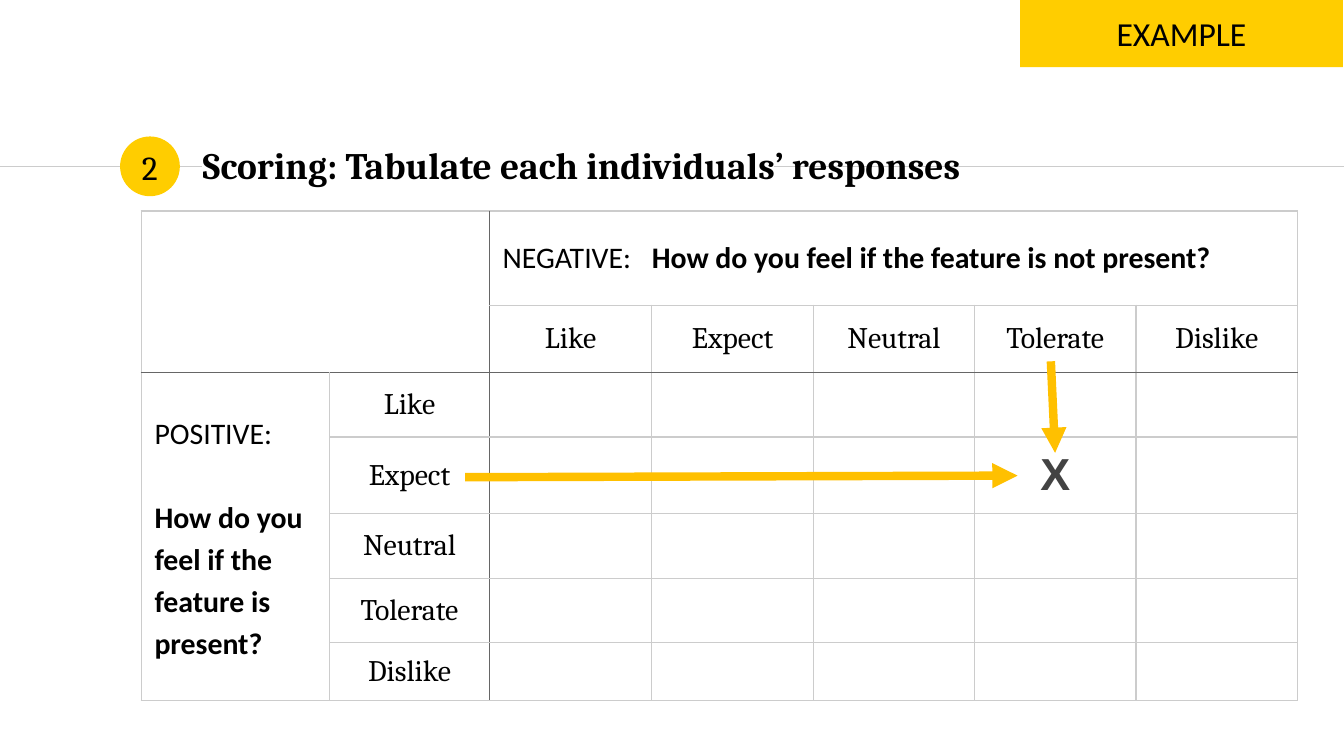
from lxml import etree
from pptx import Presentation
from pptx.dml.color import RGBColor
from pptx.enum import shapes, text
from pptx.oxml.ns import qn
from pptx.util import Cm, Pt

GOLD, AMBER = "FFCD00", "FFC000"
PALE, DARK, BLACK = "CCCCCC", "666666", "000000"
LEVELS = ["Like", "Expect", "Neutral", "Tolerate", "Dislike"]
WIDTHS = [3.56, 3.02, 3.07] + [3.05] * 4
HEIGHTS = [1.78, 1.27, 1.22, 1.45, 1.22, 1.22, 1.09]
CENTER = text.PP_ALIGN.CENTER


def tint(value):
    return RGBColor.from_string(value)


def style(run, size, face, color=BLACK, bold=False):
    font = run.font
    font.size, font.name, font.bold = Pt(size), face, bold
    font.color.rgb = tint(color)


def frame(box, words, size, face, align=CENTER, bold=False):
    """Put one middle-anchored line of text in a shape."""
    body = box.text_frame
    body.word_wrap = True
    body.auto_size = text.MSO_AUTO_SIZE.NONE
    body.vertical_anchor = text.MSO_ANCHOR.MIDDLE
    body.margin_left = body.margin_right = Cm(0.25)
    body.margin_top = body.margin_bottom = Cm(0.25)
    body.text = words
    para = body.paragraphs[0]
    para.alignment = align
    style(para.runs[0], size, face, bold=bold)


def block(slide, kind, x, y, w, h):
    shape = slide.shapes.add_shape(kind, Cm(x), Cm(y), Cm(w), Cm(h))
    shape.shadow.inherit = False
    shape.fill.solid()
    shape.fill.fore_color.rgb = tint(GOLD)
    shape.line.fill.background()
    return shape


def rule(slide, x1, y1, x2, y2, color, width, arrow=False):
    line = slide.shapes.add_connector(
        shapes.MSO_CONNECTOR.STRAIGHT, Cm(x1), Cm(y1), Cm(x2), Cm(y2))
    line.line.color.rgb = tint(color)
    line.line.width = Pt(width)
    if arrow:
        etree.SubElement(line.line._get_or_add_ln(), qn("a:tailEnd"), type="triangle")
    etree.SubElement(line.element.spPr, qn("a:effectLst"))


def edge(cell, side, color):
    props = cell._tc.get_or_add_tcPr()
    line = etree.SubElement(props, qn("a:ln" + side), w=str(Pt(0.75)))
    fill = etree.SubElement(line, qn("a:solidFill"))
    etree.SubElement(fill, qn("a:srgbClr"), val=color)


def dress(cell, row, col):
    """Set borders, darker around the headings, with margins and no fill."""
    last_row = row + cell.span_height - 1
    last_col = col + cell.span_width - 1
    marks = {"L": col == 2, "R": last_col == 1, "T": row == 2, "B": last_row == 1}
    for side, strong in marks.items():
        edge(cell, side, DARK if strong else PALE)
    cell.fill.background()
    cell.vertical_anchor = text.MSO_ANCHOR.MIDDLE
    cell.margin_left = cell.margin_right = Cm(0.25)
    cell.margin_top = cell.margin_bottom = Cm(0.18)


def label(cell, words, size=16, face="Cambria", color=BLACK, bold=False):
    cell.text = words
    para = cell.text_frame.paragraphs[0]
    para.alignment = CENTER
    style(para.runs[0], size, face, color, bold)


def ask_across(cell):
    para = cell.text_frame.paragraphs[0]
    lines = ["NEGATIVE:\t", "How do you feel if the feature is not present?"]
    for words, bold in zip(lines, (False, True)):
        run = para.add_run()
        run.text = words
        style(run, 16, "Calibri", bold=bold)
    tabs = etree.SubElement(para._p.get_or_add_pPr(), qn("a:tabLst"))
    etree.SubElement(tabs, qn("a:tab"), pos=str(Cm(2.82)), algn="l")


def ask_down(cell):
    cell.text = "POSITIVE:\nHow do you feel if the feature is present?"
    first, second = cell.text_frame.paragraphs
    for para in (first, second):
        para.line_spacing = 1.15
        style(para.runs[0], 16, "Calibri", bold=para is second)
    second.space_before = Pt(22.5)


def grid(slide):
    table = slide.shapes.add_table(
        len(HEIGHTS), len(WIDTHS), Cm(2.67), Cm(3.99),
        Cm(sum(WIDTHS)), Cm(sum(HEIGHTS))).table
    table.first_row = table.horz_banding = False
    for column, width in zip(table.columns, WIDTHS):
        column.width = Cm(width)
    for row, height in zip(table.rows, HEIGHTS):
        row.height = Cm(height)
    for start, end in [((0, 0), (1, 1)), ((0, 2), (0, 6)), ((2, 0), (6, 0))]:
        table.cell(*start).merge(table.cell(*end))
    for row in range(len(HEIGHTS)):
        for col in range(len(WIDTHS)):
            dress(table.cell(row, col), row, col)
            if row > 1 and col > 1:
                inner = table.cell(row, col)
                inner.margin_top = inner.margin_bottom = 0
    ask_across(table.cell(0, 2))
    ask_down(table.cell(2, 0))
    for step, level in enumerate(LEVELS, 2):
        label(table.cell(1, step), level)
        label(table.cell(step, 1), level)
    label(table.cell(3, 5), "X", 24, "Arial", "434343", True)


def heading(slide):
    title = slide.shapes.title
    title.left, title.top, title.width, title.height = (
        Cm(3.58), Cm(2.51), Cm(20.04), Cm(1.22))
    frame(title, "Scoring: Tabulate each individuals’ responses",
          20, "Cambria", text.PP_ALIGN.LEFT, True)
    title.element.getparent().append(title.element)  # in front of the rules


def main():
    deck = Presentation()
    deck.slide_width, deck.slide_height = Cm(25.4), Cm(14.29)
    slide = deck.slides.add_slide(deck.slide_layouts[5])
    rule(slide, 0, 3.15, 3.81, 3.15, PALE, 0.75)
    block(slide, shapes.MSO_SHAPE.OVAL, 2.27, 2.58, 1.13, 1.13)
    rule(slide, 14.63, 3.15, 25.4, 3.15, PALE, 0.75)
    heading(slide)
    banner = block(slide, shapes.MSO_SHAPE.RECTANGLE, 19.28, 0, 6.1, 1.27)
    frame(banner, "EXAMPLE", 18, "Calibri")
    number = slide.shapes.add_textbox(Cm(2.31), Cm(2.62), Cm(1.04), Cm(1.09))
    frame(number, "2", 18, "Cambria")
    grid(slide)
    rule(slide, 19.86, 6.83, 19.94, 8.56, AMBER, 4.5, True)
    rule(slide, 8.79, 9.02, 19.23, 8.99, AMBER, 4.5, True)
    deck.save("out.pptx")


if __name__ == "__main__":
    main()
